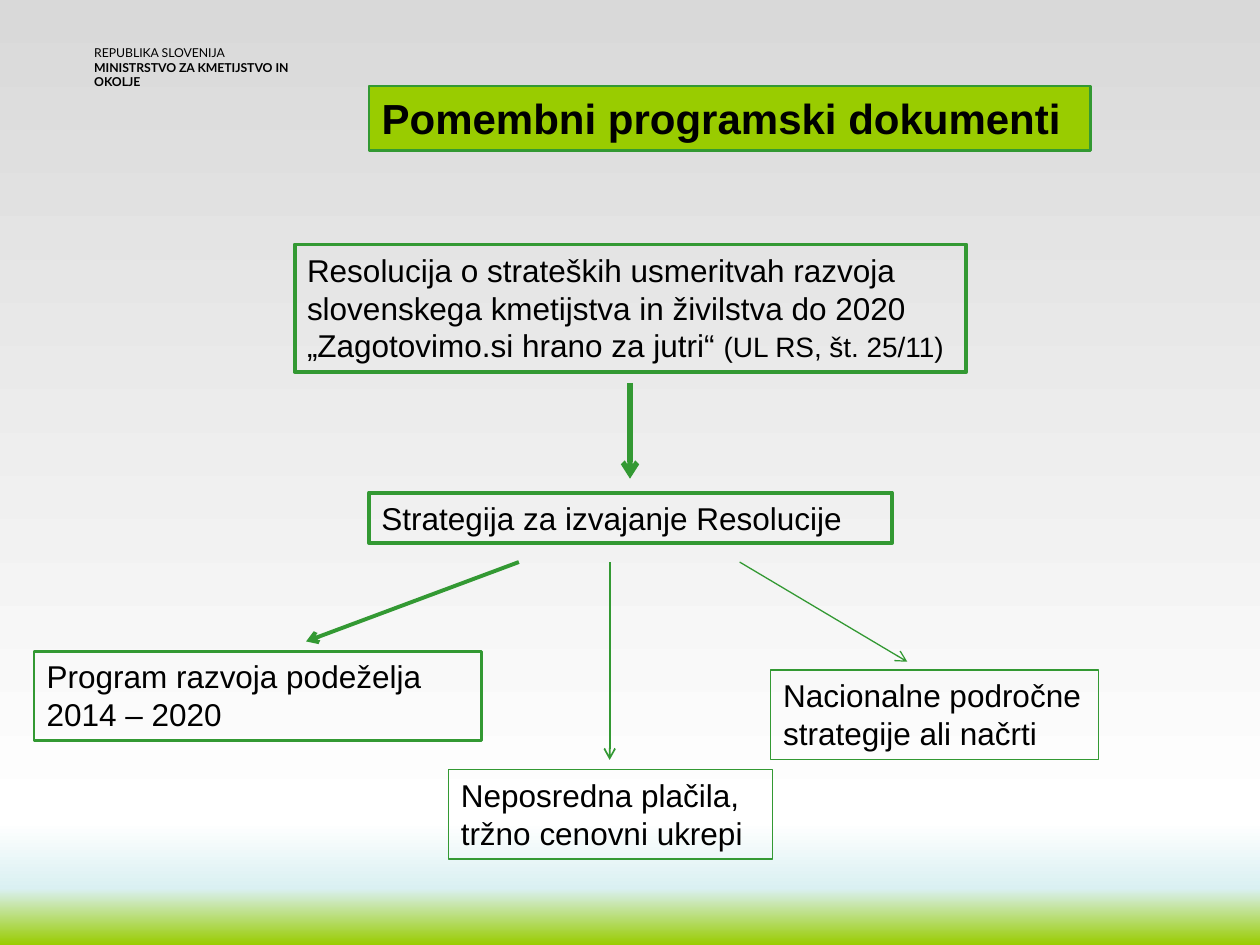
from dataclasses import dataclass

from lxml.etree import SubElement
from pptx import Presentation
from pptx.dml.color import RGBColor
from pptx.enum.shapes import MSO_CONNECTOR, MSO_SHAPE
from pptx.enum.text import MSO_ANCHOR, MSO_AUTO_SIZE, PP_ALIGN
from pptx.oxml.ns import qn
from pptx.util import Cm, Pt


@dataclass(frozen=True)
class Theme:
    green: str = "339933"
    lime: str = "99CC00"
    ink: str = "000000"
    # Background stops: percent from the top, colour
    backdrop: tuple = ((0, "D9D9D9"), (87, "FFFFFF"), (94, "DAF0F2"), (100, "99CC00"))
    body_font: str = "Arial"
    header_font: str = "Lato"
    title_size: int = 24
    body_size: int = 18
    note_size: int = 16
    header_size: int = 7
    header_leading: float = 8.4


class SlideBuilder:
    def __init__(self, slide, theme):
        self.slide = slide
        self.theme = theme

    def background(self):
        fill = self.slide.background.fill
        fill.gradient()
        fill.gradient_angle = 270
        stops = next(self.slide.element.iter(qn("a:gsLst")))
        stops.clear()
        for percent, colour in self.theme.backdrop:
            stop = SubElement(stops, qn("a:gs"), pos=str(percent * 1000))
            SubElement(stop, qn("a:srgbClr"), val=colour)

    def add_run(self, paragraph, text, size, font=None, bold=False):
        run = paragraph.add_run()
        run.text = text
        run.font.name = font or self.theme.body_font
        run.font.size = Pt(size)
        run.font.bold = bold
        run.font.color.rgb = RGBColor.from_string(self.theme.ink)

    def prepare_text(self, shape):
        frame = shape.text_frame
        frame.word_wrap = True
        frame.auto_size = MSO_AUTO_SIZE.NONE
        frame.vertical_anchor = MSO_ANCHOR.TOP
        frame.paragraphs[0].alignment = PP_ALIGN.LEFT
        return frame

    def outline(self, shape, width):
        shape.line.color.rgb = RGBColor.from_string(self.theme.green)
        shape.line.width = Pt(width)

    def header(self, left, top, width, height, lines):
        box = self.slide.shapes.add_textbox(Cm(left), Cm(top), Cm(width), Cm(height))
        frame = self.prepare_text(box)
        frame.margin_left = frame.margin_right = 0
        frame.margin_top = frame.margin_bottom = 0
        for index, (text, bold) in enumerate(lines):
            paragraph = frame.add_paragraph() if index else frame.paragraphs[0]
            paragraph.line_spacing = Pt(self.theme.header_leading)
            self.add_run(paragraph, text, self.theme.header_size, self.theme.header_font, bold)

    def title(self, left, top, width, height, text):
        title = self.slide.shapes.title
        title.left, title.top = Cm(left), Cm(top)
        title.width, title.height = Cm(width), Cm(height)
        title.fill.solid()
        title.fill.fore_color.rgb = RGBColor.from_string(self.theme.lime)
        self.outline(title, 1.5)
        frame = self.prepare_text(title)
        self.add_run(frame.paragraphs[0], text, self.theme.title_size, bold=True)

    def document(self, left, top, width, height, border, text, note=None):
        box = self.slide.shapes.add_shape(
            MSO_SHAPE.RECTANGLE, Cm(left), Cm(top), Cm(width), Cm(height))
        box.shadow.inherit = False
        box.fill.background()
        self.outline(box, border)
        paragraph = self.prepare_text(box).paragraphs[0]
        self.add_run(paragraph, text, self.theme.body_size)
        if note:
            self.add_run(paragraph, note, self.theme.note_size)

    def arrow(self, start, end, width):
        arrow = self.slide.shapes.add_connector(
            MSO_CONNECTOR.STRAIGHT, *(Cm(value) for value in start + end))
        self.outline(arrow, width)
        SubElement(arrow.line._get_or_add_ln(), qn("a:tailEnd"), type="arrow")
        SubElement(arrow.element.spPr, qn("a:effectLst"))


def main():
    deck = Presentation()
    deck.slide_width, deck.slide_height = Cm(25.4), Cm(19.05)
    title_only = deck.slide_layouts[5]
    page = SlideBuilder(deck.slides.add_slide(title_only), Theme())

    # Background, ministry header and title
    page.background()
    page.header(1.9, 0.91, 4.52, 0.58, [
        ("REPUBLIKA SLOVENIJA", False),
        ("MINISTRSTVO ZA KMETIJSTVO IN OKOLJE", True),
    ])
    page.title(7.44, 1.73, 14.55, 1.3, "Pomembni programski dokumenti")

    # Resolution and the strategy that carries it out
    page.document(
        5.94, 4.93, 13.54, 2.57, 2.25,
        "Resolucija o strateških usmeritvah razvoja slovenskega kmetijstva "
        "in živilstva do 2020 „Zagotovimo.si hrano za jutri“ ",
        note="(UL RS, št. 25/11)")
    page.document(7.44, 9.93, 10.54, 1.02, 2.25, "Strategija za izvajanje Resolucije")
    page.arrow((12.7, 7.72), (12.7, 9.65), 3)

    # Three documents that follow from the strategy
    branch_top, branch_height = 11.33, 1.8
    branches = [
        # left, top, width, border, text, arrow start x, arrow end, arrow width
        (0.69, 13.13, 9.02, 1.5, "Program razvoja podeželja 2014 – 2020",
         10.46, (6.17, 12.93), 2.25),
        (9.04, 15.52, 6.53, 0.75, "Neposredna plačila, tržno cenovni ukrepi",
         12.29, (12.29, 15.32), 1),
        (15.54, 13.51, 6.6, 0.75, "Nacionalne področne strategije ali načrti",
         14.91, (18.29, 13.34), 0.75),
    ]
    for left, top, width, border, text, start_x, arrow_end, arrow_width in branches:
        page.arrow((start_x, branch_top), arrow_end, arrow_width)
        page.document(left, top, width, branch_height, border, text)

    deck.save("out.pptx")


if __name__ == "__main__":
    main()
